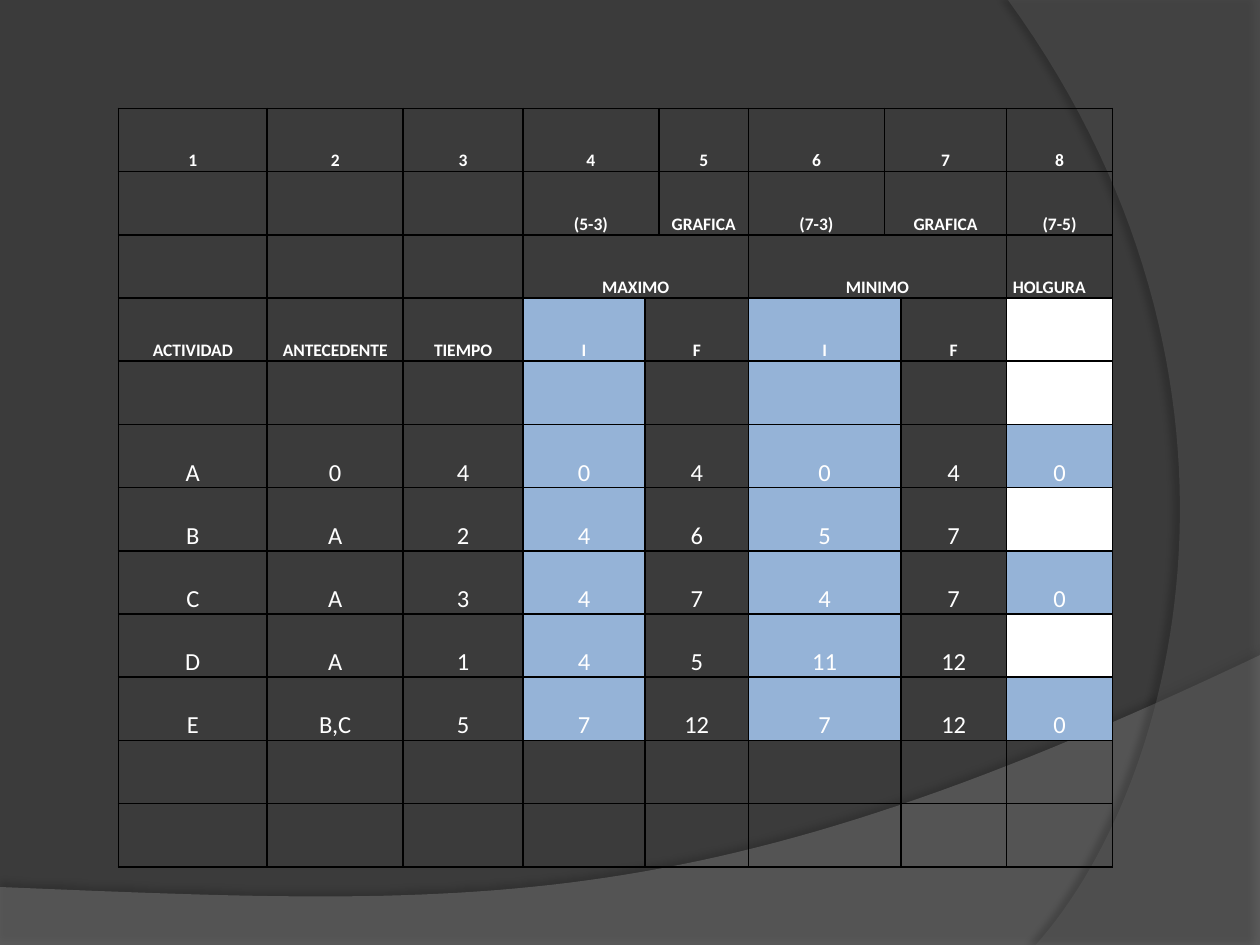
from itertools import accumulate

from lxml import etree
from pptx import Presentation
from pptx import util as u
from pptx.dml.color import RGBColor
from pptx.enum import text
from pptx.oxml import ns

WIDE, HIGH = u.Inches(10), u.Inches(7.5)
HUES = {"back": "3B3B3B", "wave": "7F7F7F", "arc": "5E5E5E", "ink": "FFFFFF",
        "blue": "95B3D7", "white": "FFFFFF", "line": "000000"}

# Columns that each cell of a row takes
HEAD = (1, 1, 1, 2, 1, 1, 2, 1)
JOIN = (1, 1, 1, 3, 3, 1)
BODY = (1, 1, 1, 1, 2, 2, 1, 1)
COLS = (1.18, 1.08, 0.95, 0.97, 0.11, 0.71, 1.08, 0.13, 0.84, 0.84)
BLANK = (BODY, ("",) * 8)
ROWS = [
    (HEAD, ("1", "2", "3", "4", "5", "6", "7", "8")),
    (HEAD, ("", "", "", "(5-3)", "GRAFICA", "(7-3)", "GRAFICA", "(7-5)")),
    (JOIN, ("", "", "", "MAXIMO", "MINIMO", "HOLGURA")),
    (BODY, ("ACTIVIDAD", "ANTECEDENTE", "TIEMPO", "I", "F", "I", "F", "")),
    BLANK,
    (BODY, ("A", "0", "4", "0", "4", "0", "4", "0")),
    (BODY, ("B", "A", "2", "4", "6", "5", "7", "")),
    (BODY, ("C", "A", "3", "4", "7", "4", "7", "0")),
    (BODY, ("D", "A", "1", "4", "5", "11", "12", "")),
    (BODY, ("E", "B,C", "5", "7", "12", "7", "12", "0")),
    BLANK,
    BLANK,
]
TITLES, SHADED = range(5), range(3, 10)


def area(left, top, wide, high):
    """Turn percentages of the slide into a box."""
    return [round(part * side / 100) for part, side in
            zip((left, top, wide, high), (WIDE, HIGH, WIDE, HIGH))]


def rgb(name):
    return RGBColor.from_string(HUES[name])


def node(up, tag, **attrs):
    made = etree.SubElement(up, ns.qn(tag))
    for key, val in attrs.items():
        made.set(key, str(val))
    return made


def curve(a, b, c, d, steps=60):
    """List the points of a cubic curve."""
    for n in range(steps + 1):
        t = n / steps
        s = 1 - t
        yield tuple(s**3 * p + 3 * s * s * t * q + 3 * s * t * t * r + t**3 * e
                    for p, q, r, e in zip(a, b, c, d))


def sweep(slide, box, bend, ends, hue, alpha, shade):
    """Draw a translucent panel with one curved edge, in shares of its box."""
    left, top, wide, high = box
    spots = [(left + x * wide, top + y * high) for x, y in [*curve(*bend), *ends]]
    pen = slide.shapes.build_freeform(*spots[0])
    pen.add_line_segments(spots[1:], close=True)
    panel = pen.convert_to_shape()
    panel.line.fill.background()
    panel.fill.solid()
    panel.fill.fore_color.rgb = rgb(hue)
    props = panel.fill._xPr
    node(props.find(".//" + ns.qn("a:srgbClr")), "a:alpha", val=alpha * 1000)
    dark, blur, dist, turn = shade
    cast = node(node(props, "a:effectLst"), "a:outerShdw", blurRad=u.Pt(blur),
                dist=u.Pt(dist), dir=turn * 60000, algn="ctr", rotWithShape=0)
    node(node(cast, "a:srgbClr", val=HUES["line"]), "a:alpha", val=dark * 1000)


def frame(cell):
    props = cell._tc.get_or_add_tcPr()
    for n, side in enumerate("LRTB"):
        edge = node(props, "a:ln" + side, w=u.Pt(1))
        node(node(edge, "a:solidFill"), "a:srgbClr", val=HUES["line"])
        props.insert(n, edge)


def paint(cell, hue):
    if hue:
        cell.fill.solid()
        cell.fill.fore_color.rgb = rgb(hue)
    else:
        cell.fill.background()


def write(cell, words, title):
    look = {"margin_left": u.Inches(0.05), "margin_right": u.Inches(0.05),
            "margin_top": 0, "margin_bottom": 0,
            "vertical_anchor": text.MSO_ANCHOR.BOTTOM}
    for key, val in look.items():
        setattr(cell, key, val)
    para = cell.text_frame.paragraphs[0]
    para.line_spacing = 1.15
    left = words == "HOLGURA"
    para.alignment = text.PP_ALIGN.LEFT if left else text.PP_ALIGN.CENTER
    if words:
        run = para.add_run()
        run.text = words
        font = {"name": "Calibri", "size": u.Pt(10 if title else 14), "bold": title}
        for key, val in font.items():
            setattr(run.font, key, val)
        run.font.color.rgb = rgb("ink")


def shade(row, spot, words):
    """Choose the fill: both start columns are blue, and so is zero slack."""
    if row not in SHADED:
        return None
    if spot in (3, 5):
        return "blue"
    if spot == 7:
        return "blue" if words == "0" else "white"
    return None


def grid(slide, box):
    table = slide.shapes.add_table(len(ROWS), len(COLS), *box).table
    table.first_row = table.horz_banding = False
    for col, part in zip(table.columns, COLS):
        col.width = round(box[2] * part / sum(COLS))
    for row in table.rows:
        row.height = round(box[3] / len(ROWS))
    for r, (spans, words) in enumerate(ROWS):
        starts = accumulate(spans, initial=0)
        for spot, (c, span, word) in enumerate(zip(starts, spans, words)):
            cell = table.cell(r, c)
            if span > 1:
                cell.merge(table.cell(r, c + span - 1))
            write(cell, word, r in TITLES)
            for k in range(c, c + span):
                part = table.cell(r, k)
                paint(part, shade(r, spot, word))
                frame(part)


def main():
    deck = Presentation()
    deck.slide_width, deck.slide_height = WIDE, HIGH
    slide = deck.slides.add_slide(deck.slide_layouts[6])
    slide.background.fill.solid()
    slide.background.fill.fore_color.rgb = rgb("back")
    sweep(slide, area(0, 69.33, 100, 30.67),
          ((1, 0), (0.56, 0.91), (0.39, 0.87), (0, 0.8)),
          ((0, 1), (1, 1)), "wave", 45, (35, 4, 3.5, 270))
    sweep(slide, area(80, 0, 20, 100),
          ((0, 0), (1.09, 0.4), (0.68, 0.83), (0.11, 1)),
          ((1, 1), (1, 0)), "arc", 40, (45, 4, 4, 180))
    grid(slide, area(9.4, 11.47, 78.9, 80.27))
    deck.save("out.pptx")


if __name__ == "__main__":
    main()
